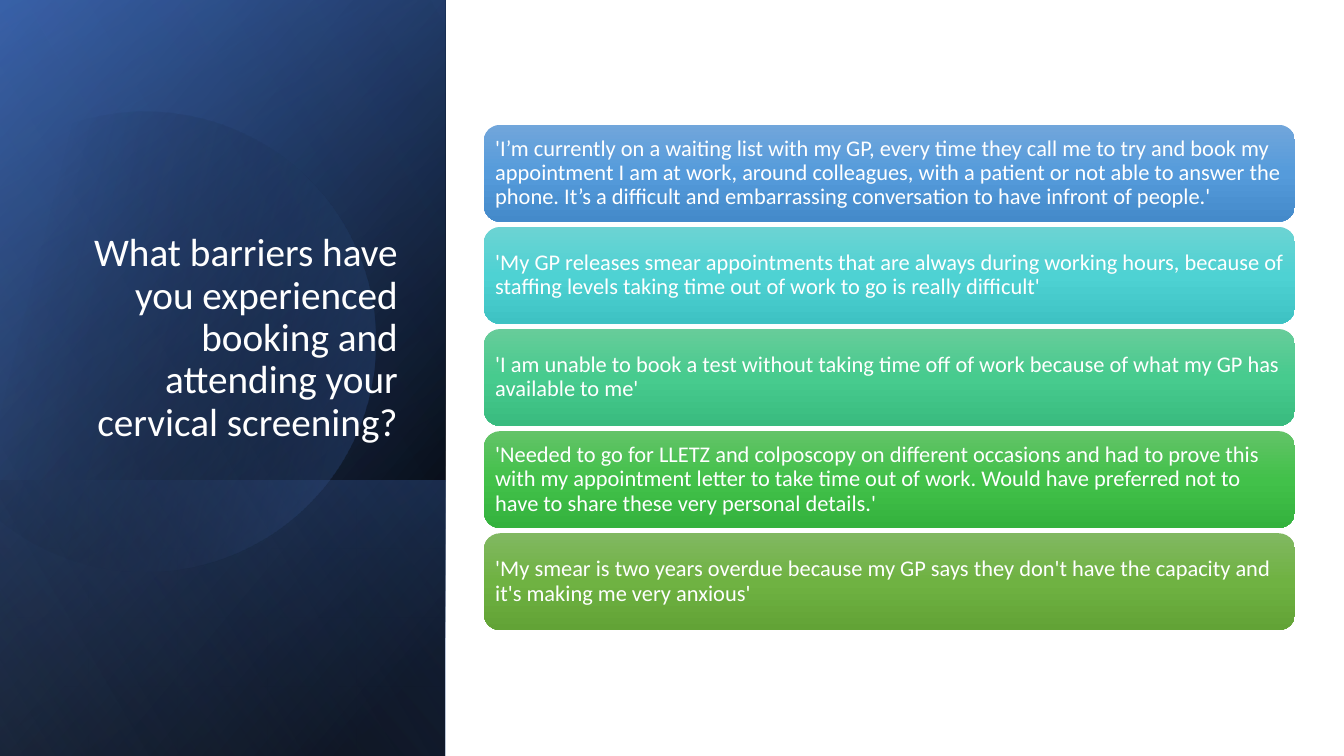
from math import cos, radians, sin

from lxml import etree
from pptx import Presentation
from pptx.dml.color import RGBColor
from pptx.enum.shapes import MSO_SHAPE
from pptx.enum.text import MSO_ANCHOR, PP_ALIGN
from pptx.oxml.ns import qn
from pptx.util import Cm, Pt

RECT, ROUNDED = MSO_SHAPE.RECTANGLE, MSO_SHAPE.ROUNDED_RECTANGLE
MIDDLE, BOTTOM = MSO_ANCHOR.MIDDLE, MSO_ANCHOR.BOTTOM
LEFT, RIGHT = PP_ALIGN.LEFT, PP_ALIGN.RIGHT

SLIDE_W, SLIDE_H = 50.8, 28.58
FONT, WHITE = "Calibri", "FFFFFF"

# Content
QUESTION = "What barriers have you experienced booking and attending your cervical screening?"
# Each answer: quote, then the top, middle and bottom colours of its card
ANSWERS = [
    ("'I’m currently on a waiting list with my GP, every time they call me to try and book my "
     "appointment I am at work, around colleagues, with a patient or not able to answer the phone. "
     "It’s a difficult and embarrassing conversation to have infront of people.'",
     ("71A6DB", "559BDB", "448ACA")),
    ("'My GP releases smear appointments that are always during working hours, because of staffing "
     "levels taking time out of work to go is really difficult'",
     ("6CD3D3", "4ED2D3", "3EC2C3")),
    ("'I am unable to book a test without taking time off of work because of what my GP has "
     "available to me'",
     ("67CC9A", "47CB8E", "39BB7F")),
    ("'Needed to go for LLETZ and colposcopy on different occasions and had to prove this with my "
     "appointment letter to take time out of work. Would have preferred not to have to share these "
     "very personal details.'",
     ("63C368", "42C14A", "34B23D")),
    ("'My smear is two years overdue because my GP says they don't have the capacity and it's "
     "making me very anxious'",
     ("81B861", "6FB242", "62A336")),
]

# Side panel layers: top, height, gradient angle, stops of (position, colour, opacity)
PANEL_W = 16.83
BASE_LAYERS = [
    (0, SLIDE_H, 50, [(8, "000000", 100), (100, "2F5597", 100)]),
    (0, SLIDE_H, 30, [(0, "000000", 0), (99, "4472C4", 46)]),
    (18.16, 10.41, 130, [(2, "4472C4", 29), (100, "000000", 30)]),
]
TOP_LAYER = (0, SLIDE_H, 120, [(0, "000000", 0), (99, "8FAADC", 11)])

# Cut circle on the panel: centre, radius, rim angles in degrees, tilt
CIRCLE_X, CIRCLE_Y, RADIUS = 5.47, 12.75, 8.71
RIM_ANGLES = (-118, -90, 0, 90, 150)
CIRCLE_TILT = 343.9
CIRCLE_STOPS = [(29, "000000", 0), (100, "4472C4", 43)]

# Answer cards, and the gap from a card's edge to its quote
CARD_X, CARD_Y, CARD_W, CARD_H, CARD_PITCH = 18.29, 4.72, 30.66, 3.66, 3.86
QUOTE_GAP = 0.18


def rgb(color):
    return RGBColor.from_string(color)


def paint(shape, angle, stops):
    """Give a shape a linear gradient without outline or shadow."""
    shape.shadow.inherit = False
    shape.line.fill.background()
    shape.fill.gradient()
    gradient = shape._element.spPr.find(qn("a:gradFill"))
    gradient.find(qn("a:lin")).set("ang", str(angle * 60000))
    stop_list = gradient.find(qn("a:gsLst"))
    for old_stop in list(stop_list):
        stop_list.remove(old_stop)
    for position, color, opacity in stops:
        stop = etree.SubElement(stop_list, qn("a:gs"), pos=str(position * 1000))
        tint = etree.SubElement(stop, qn("a:srgbClr"), val=color)
        if opacity < 100:
            etree.SubElement(tint, qn("a:alpha"), val=str(opacity * 1000))


def add_text(slide, box, text, size, align, anchor, inset_x, inset_y):
    frame = slide.shapes.add_textbox(*map(Cm, box)).text_frame
    frame.text = text
    frame.word_wrap = True
    frame.vertical_anchor = anchor
    frame.margin_left = frame.margin_right = Cm(inset_x)
    frame.margin_top = frame.margin_bottom = Cm(inset_y)
    paragraph = frame.paragraphs[0]
    paragraph.alignment = align
    paragraph.line_spacing = 0.9
    font = paragraph.runs[0].font
    font.name, font.size = FONT, Pt(size)
    font.color.rgb = rgb(WHITE)


def add_panel_layer(slide, top, height, angle, stops):
    """Add a mirrored rectangle, turned a quarter so it fills the panel width."""
    left = (PANEL_W - height) / 2
    turned_top = top + (height - PANEL_W) / 2
    layer = slide.shapes.add_shape(RECT, Cm(left), Cm(turned_top), Cm(height), Cm(PANEL_W))
    layer.rotation = 90
    layer._element.spPr.find(qn("a:xfrm")).set("flipH", "1")
    paint(layer, angle, stops)


def add_cut_circle(slide):
    """Outline the rim with straight lines, then bend each one into an arc."""
    rim = [(Cm(CIRCLE_X + RADIUS * cos(radians(a))), Cm(CIRCLE_Y + RADIUS * sin(radians(a))))
           for a in RIM_ANGLES]
    builder = slide.shapes.build_freeform(*rim[0])
    builder.add_line_segments(rim[1:], close=True)
    circle = builder.convert_to_shape()
    radius = str(Cm(RADIUS))
    lines = list(circle._element.spPr.iter(qn("a:lnTo")))
    for line, start, end in zip(lines, RIM_ANGLES, RIM_ANGLES[1:]):
        arc = etree.Element(qn("a:arcTo"), wR=radius, hR=radius,
                            stAng=str(start % 360 * 60000), swAng=str((end - start) * 60000))
        line.getparent().replace(line, arc)
    circle.rotation = CIRCLE_TILT
    paint(circle, 30, CIRCLE_STOPS)


def main():
    prs = Presentation()
    prs.slide_width, prs.slide_height = Cm(SLIDE_W), Cm(SLIDE_H)
    slide = prs.slides.add_slide(prs.slide_layouts[6])

    # Side panel
    for layer in BASE_LAYERS:
        add_panel_layer(slide, *layer)
    add_cut_circle(slide)
    add_panel_layer(slide, *TOP_LAYER)

    # Question
    add_text(slide, (2.44, 7.02, 12.98, 9.98), QUESTION, 42, RIGHT, BOTTOM, 0.38, 0.19)

    # Answers
    for row, (quote, colors) in enumerate(ANSWERS):
        top = CARD_Y + row * CARD_PITCH
        card = slide.shapes.add_shape(ROUNDED, Cm(CARD_X), Cm(top), Cm(CARD_W), Cm(CARD_H))
        paint(card, 90, [(i * 50, color, 100) for i, color in enumerate(colors)])
        quote_box = (CARD_X + QUOTE_GAP, top + QUOTE_GAP,
                     CARD_W - 2 * QUOTE_GAP, CARD_H - 2 * QUOTE_GAP)
        add_text(slide, quote_box, quote, 24, LEFT, MIDDLE, 0.25, 0.25)

    prs.save("out.pptx")


if __name__ == "__main__":
    main()
